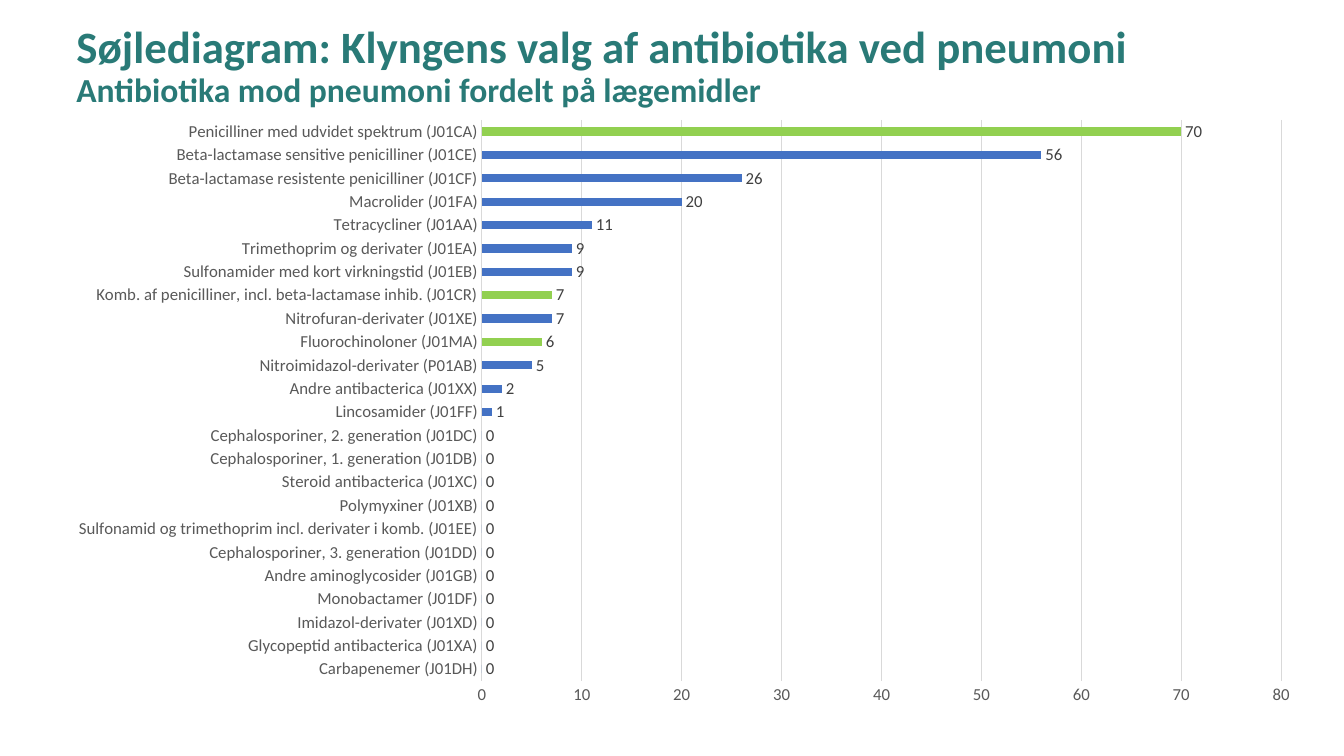
"""Build a slide with a bar chart of antibiotic choices for pneumonia."""
from lxml.etree import SubElement as Sub
from pptx import Presentation
from pptx.chart.data import CategoryChartData as Data
from pptx.dml.color import RGBColor as RGB
from pptx.enum.chart import XL_CHART_TYPE as Kind, XL_LABEL_POSITION as Spot
from pptx.enum.chart import XL_TICK_MARK as Tick
from pptx.enum.text import MSO_ANCHOR as Anchor
from pptx.oxml.ns import qn
from pptx.util import Pt

TITLE = (
    ("Søjlediagram: Klyngens valg af antibiotika ved pneumoni", "head"),
    ("Antibiotika mod pneumoni fordelt på lægemidler", "sub"),
)
DRUGS = [
    ("Penicilliner med udvidet spektrum (J01CA)", 70),
    ("Beta-lactamase sensitive penicilliner (J01CE)", 56),
    ("Beta-lactamase resistente penicilliner (J01CF)", 26),
    ("Macrolider (J01FA)", 20),
    ("Tetracycliner (J01AA)", 11),
    ("Trimethoprim og derivater (J01EA)", 9),
    ("Sulfonamider med kort virkningstid (J01EB)", 9),
    ("Komb. af penicilliner, incl. beta-lactamase inhib. (J01CR)", 7),
    ("Nitrofuran-derivater (J01XE)", 7),
    ("Fluorochinoloner (J01MA)", 6),
    ("Nitroimidazol-derivater (P01AB)", 5),
    ("Andre antibacterica (J01XX)", 2),
    ("Lincosamider (J01FF)", 1),
    ("Cephalosporiner, 2. generation (J01DC)", 0),
    ("Cephalosporiner, 1. generation (J01DB)", 0),
    ("Steroid antibacterica (J01XC)", 0),
    ("Polymyxiner (J01XB)", 0),
    ("Sulfonamid og trimethoprim incl. derivater i komb. (J01EE)", 0),
    ("Cephalosporiner, 3. generation (J01DD)", 0),
    ("Andre aminoglycosider (J01GB)", 0),
    ("Monobactamer (J01DF)", 0),
    ("Imidazol-derivater (J01XD)", 0),
    ("Glycopeptid antibacterica (J01XA)", 0),
    ("Carbapenemer (J01DH)", 0),
]
MARKED = ("J01CA", "J01CR", "J01MA")
THEME = {
    "font": "Calibri",
    "size": {"head": 32, "sub": 24, "chart": 12},
    "color": {"title": "297A77", "bar": "4472C4", "mark": "92D050",
              "axis": "595959", "label": "404040", "grid": "D9D9D9"},
}
PAGE = (960, 540)
TITLE_BOX = (47.5, 19.5, 872, 57.5)
CHART_BOX = (41, 77, 892, 435.5)
PLOT = {"x": 0.34, "y": 0.02, "w": 0.64, "h": 0.92}


def put(item, **values):
    for name, value in values.items():
        setattr(item, name, value)


def tint(name):
    return RGB.from_string(THEME["color"][name])


def style(font, size, color, bold=False):
    put(font, name=THEME["font"], size=Pt(THEME["size"][size]), bold=bold)
    font.color.rgb = tint(color)


def paint(fill, name):
    fill.solid()
    fill.fore_color.rgb = tint(name)


def rule(line):
    line.width = Pt(0.75)
    line.color.rgb = tint("grid")


def add_title(slide):
    frame = slide.shapes.add_textbox(*map(Pt, TITLE_BOX)).text_frame
    put(frame, word_wrap=True, vertical_anchor=Anchor.MIDDLE)
    para = frame.paragraphs[0]
    para.line_spacing = 0.9
    for row, (text, size) in enumerate(TITLE):
        if row:
            para.add_line_break()
        run = para.add_run()
        run.text = text
        style(run.font, size, "title", True)


def place_plot(chart):
    area = chart.plots[0]._element.getparent()
    for old in area.findall(qn("c:layout")):
        area.remove(old)
    layout = Sub(area, qn("c:layout"))
    area.insert(0, layout)
    manual = Sub(layout, qn("c:manualLayout"))
    parts = {"layoutTarget": "inner", "xMode": "edge", "yMode": "edge", **PLOT}
    for tag, value in parts.items():
        Sub(manual, qn("c:" + tag)).set("val", str(value))


def add_bars(slide):
    drugs = DRUGS[::-1]
    data = Data(number_format="#,##0")
    data.categories = [name for name, count in drugs]
    data.add_series("Series 1", [count for name, count in drugs])
    chart = slide.shapes.add_chart(Kind.BAR_CLUSTERED, *map(Pt, CHART_BOX), data).chart
    put(chart, has_legend=False, has_title=False)
    style(chart.font, "chart", "axis")
    place_plot(chart)

    for axis in (chart.category_axis, chart.value_axis):
        put(axis, major_tick_mark=Tick.NONE, minor_tick_mark=Tick.NONE)
        style(axis.tick_labels.font, "chart", "axis")
    rule(chart.category_axis.format.line)
    chart.category_axis.has_major_gridlines = False
    scale = chart.value_axis
    put(scale, minimum_scale=0, maximum_scale=80, major_unit=10, has_major_gridlines=True)
    put(scale.tick_labels, number_format="#,##0", number_format_is_linked=False)
    scale.format.line.fill.background()
    rule(scale.major_gridlines.format.line)

    plot = chart.plots[0]
    put(plot, gap_width=182, vary_by_categories=False, has_data_labels=True)
    labels = plot.data_labels
    put(labels, show_value=True, position=Spot.OUTSIDE_END,
        number_format="#,##0", number_format_is_linked=False)
    style(labels.font, "chart", "label")
    bars = plot.series[0]
    paint(bars.format.fill, "bar")
    for index, (name, count) in enumerate(drugs):
        if any(code in name for code in MARKED):
            paint(bars.points[index].format.fill, "mark")


def main():
    deck = Presentation()
    put(deck, slide_width=Pt(PAGE[0]), slide_height=Pt(PAGE[1]))
    slide = deck.slides.add_slide(deck.slide_layouts[6])
    add_title(slide)
    add_bars(slide)
    deck.save("out.pptx")


if __name__ == "__main__":
    main()
